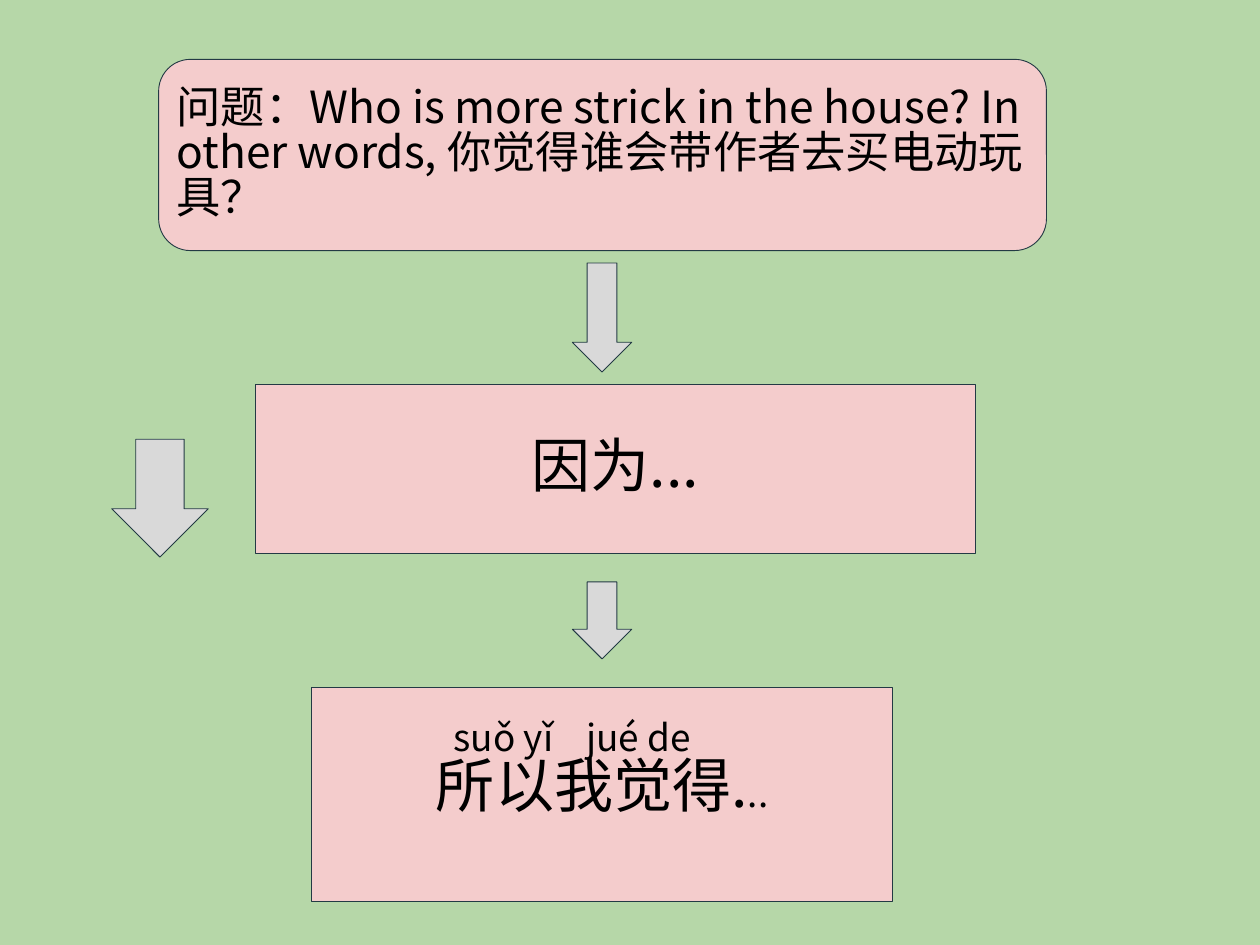
import pptx
import pptx.util
import pptx.dml.color
import pptx.enum.shapes
import pptx.enum.text
from dataclasses import dataclass
from lxml import etree

Inches = pptx.util.Inches
Pt = pptx.util.Pt
Kind = pptx.enum.shapes.MSO_SHAPE
Align = pptx.enum.text.PP_ALIGN
Anchor = pptx.enum.text.MSO_ANCHOR

QUESTION = "问题：Who is more strick in the house? In other words, 你觉得谁会带作者去买电动玩具？"
REASON = "因为..."
PINYIN = "suǒ yǐ\tjué de"
ANSWER = ["所以我觉得.", ".."]

BOXES = {
    "question": (Kind.ROUNDED_RECTANGLE, 1.79, 0.67, 10.02, 2.16),
    "reason": (Kind.RECTANGLE, 2.88, 4.34, 8.13, 1.91),
    "answer": (Kind.RECTANGLE, 3.52, 7.76, 6.55, 2.42),
}
ARROWS = [
    (6.46, 2.97, 0.67, 1.23),
    (6.46, 6.57, 0.67, 0.87),
    (1.26, 4.96, 1.09, 1.33),
]


@dataclass
class Theme:
    back: str = "B6D7A8"
    box: str = "F4CCCC"
    arrow: str = "D9D9D9"
    line: str = "233A44"
    ink: str = "000000"
    font: str = "Noto Sans CJK SC"
    small: int = 30
    body: int = 36
    large: int = 48
    pitch: float = 0.85


theme = Theme()


def color(code):
    return pptx.dml.color.RGBColor.from_string(code)


def draw(slide, kind, place, fill):
    shape = slide.shapes.add_shape(kind, *map(Inches, place))
    shape.shadow.inherit = False
    shape.fill.solid()
    shape.fill.fore_color.rgb = color(fill)
    shape.line.color.rgb = color(theme.line)
    shape.line.width = Pt(0.75)
    return shape


def frame(shape, anchor=Anchor.MIDDLE, top=0.1):
    text = shape.text_frame
    text.word_wrap = True
    text.vertical_anchor = anchor
    text.margin_left = text.margin_right = text.margin_bottom = Inches(0.1)
    text.margin_top = Inches(top)
    return text


def write(para, text, size, align=Align.LEFT):
    para.alignment = align
    para.line_spacing = theme.pitch
    run = para.add_run()
    run.text = text
    run.font.size = Pt(size)
    run.font.name = theme.font
    run.font.color.rgb = color(theme.ink)
    east = etree.SubElement(run.font._element, pptx.oxml.ns.qn("a:ea"))
    east.set("typeface", theme.font)


def indent(para, first, stop):
    props = para._p.get_or_add_pPr()
    props.set("marL", "0")
    props.set("indent", str(Inches(first)))
    tabs = etree.SubElement(props, pptx.oxml.ns.qn("a:tabLst"))
    tab = etree.SubElement(tabs, pptx.oxml.ns.qn("a:tab"))
    tab.set("pos", str(Inches(stop)))
    tab.set("algn", "l")


def main():
    deck = pptx.Presentation()
    deck.slide_width, deck.slide_height = Inches(14.22), Inches(10.67)
    slide = deck.slides.add_slide(deck.slide_layouts[6])
    slide.background.fill.solid()
    slide.background.fill.fore_color.rgb = color(theme.back)

    boxes = {name: draw(slide, kind, place, theme.box)
             for name, (kind, *place) in BOXES.items()}
    for place in ARROWS:
        draw(slide, Kind.DOWN_ARROW, place, theme.arrow)

    write(frame(boxes["question"]).paragraphs[0], QUESTION, theme.body)
    write(frame(boxes["reason"]).paragraphs[0], REASON, theme.large, align=Align.CENTER)

    text = frame(boxes["answer"], anchor=Anchor.TOP, top=0.39)
    sound = text.paragraphs[0]
    write(sound, PINYIN, theme.small)
    indent(sound, 1.5, 3.46)
    words = text.add_paragraph()
    for part, size in zip(ANSWER, (theme.large, theme.small)):
        write(words, part, size, align=Align.CENTER)

    deck.save("out.pptx")


if __name__ == "__main__":
    main()
